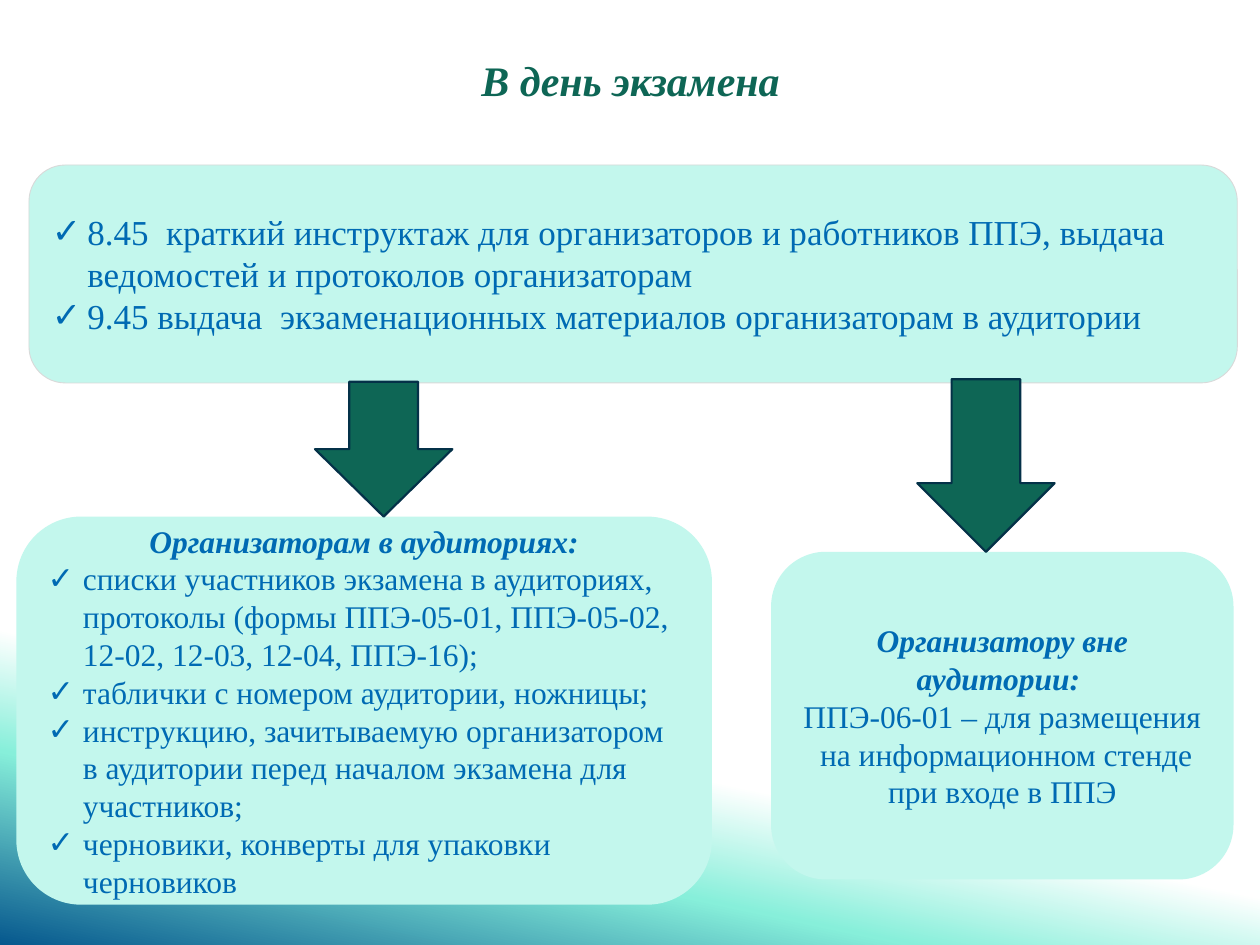
from lxml import etree
from pptx import Presentation
from pptx.dml.color import RGBColor
from pptx.enum import shapes, text
from pptx.oxml import ns
from pptx.util import Inches, Pt

THEME = {
    "font": "Times New Roman",
    "green": "0E6655", "blue": "006AB3", "mint": "C3F7ED",
    "card_line": "D9D9D9", "arrow_line": "043148",
    "title": 24, "schedule": 20, "card": 18,
    "background": [(74, "FFFFFF"), (84, "87EFDA"), (100, "06588E")],
    "background_angle": 102,
}

TITLE = "В день экзамена"
# Each card: place, type size, outline, heading, bulleted lines, centred lines
CARDS = [
    {"at": (0.23, 1.31, 9.59, 1.73), "size": THEME["schedule"],
     "line": THEME["card_line"],
     "bullets": [
         "8.45  краткий инструктаж для организаторов и работников ППЭ, "
         "выдача ведомостей и протоколов организаторам",
         "9.45 выдача  экзаменационных материалов организаторам в аудитории"]},
    {"at": (0.13, 4.1, 5.52, 3.08), "size": THEME["card"],
     "heading": "Организаторам в аудиториях:",
     "bullets": [
         "списки участников экзамена в аудиториях, протоколы "
         "(формы ППЭ-05-01, ППЭ-05-02, 12-02, 12-03, 12-04, ППЭ-16);",
         "таблички с номером аудитории, ножницы;",
         "инструкцию, зачитываемую организатором в аудитории "
         "перед началом экзамена для участников;",
         "черновики, конверты для упаковки черновиков"]},
    {"at": (6.12, 4.38, 3.67, 2.6), "size": THEME["card"],
     "heading": "Организатору вне аудитории: ",
     "centred": ["ППЭ-06-01 – для размещения  на информационном стенде "
                 "при входе в ППЭ"]},
]
ARROWS = [(2.5, 3.03, 1.09, 1.07), (7.28, 3.01, 1.09, 1.37)]


def rgb(color):
    return RGBColor.from_string(color)


def paint_background(slide):
    fill = slide.background.fill
    fill.gradient()
    fill.gradient_angle = 360 - THEME["background_angle"]
    stops = slide.background._cSld.find(".//" + ns.qn("a:gsLst"))
    for stop in list(stops):
        stops.remove(stop)
    for percent, color in THEME["background"]:
        stop = etree.SubElement(stops, ns.qn("a:gs"), pos=str(percent * 1000))
        etree.SubElement(stop, ns.qn("a:srgbClr"), val=color)


def write(frame, words, size, color=THEME["blue"], strong=False,
          bullet=False, centred=False):
    """Add a paragraph, using the frame's first one while it is empty."""
    first = frame.paragraphs[0]
    paragraph = frame.add_paragraph() if first.runs else first
    paragraph.alignment = (text.PP_ALIGN.CENTER if centred
                           else text.PP_ALIGN.LEFT)
    run = paragraph.add_run()
    run.text = words
    run.font.name = THEME["font"]
    run.font.size = Pt(size)
    run.font.bold = run.font.italic = strong
    run.font.color.rgb = rgb(color)
    if bullet:
        properties = paragraph._p.get_or_add_pPr()
        properties.set("marL", str(Inches(0.28)))
        properties.set("indent", str(-Inches(0.28)))
        etree.SubElement(properties, ns.qn("a:buFont"), typeface="Arial")
        etree.SubElement(properties, ns.qn("a:buChar"), char="✓")


def add_block(slide, kind, at, fill, line=None, width=0.5):
    block = slide.shapes.add_shape(kind, *map(Inches, at))
    block.shadow.inherit = False
    block.fill.solid()
    block.fill.fore_color.rgb = rgb(fill)
    if line:
        block.line.color.rgb = rgb(line)
        block.line.width = Pt(width)
    else:
        block.line.fill.background()
    return block


def add_card(slide, card):
    block = add_block(slide, shapes.MSO_SHAPE.ROUNDED_RECTANGLE, card["at"],
                      THEME["mint"], card.get("line"))
    frame = block.text_frame
    frame.word_wrap = True
    frame.vertical_anchor = text.MSO_ANCHOR.MIDDLE
    if "heading" in card:
        write(frame, card["heading"], card["size"], strong=True, centred=True)
    for words in card.get("bullets", []):
        write(frame, words, card["size"], bullet=True)
    for words in card.get("centred", []):
        write(frame, words, card["size"], centred=True)


def main():
    deck = Presentation()
    deck.slide_width, deck.slide_height = Inches(10), Inches(7.5)
    slide = deck.slides.add_slide(deck.slide_layouts[5])
    paint_background(slide)

    title = slide.shapes.title
    title.left, title.top, title.width, title.height = map(
        Inches, (0.54, 0.24, 8.93, 0.79))
    title.text_frame.vertical_anchor = text.MSO_ANCHOR.MIDDLE
    write(title.text_frame, TITLE, THEME["title"], color=THEME["green"],
          strong=True, centred=True)

    for card in CARDS:
        add_card(slide, card)
    for at in ARROWS:
        add_block(slide, shapes.MSO_SHAPE.DOWN_ARROW, at, THEME["green"],
                  THEME["arrow_line"], 1.25)
    deck.save("out.pptx")


if __name__ == "__main__":
    main()
